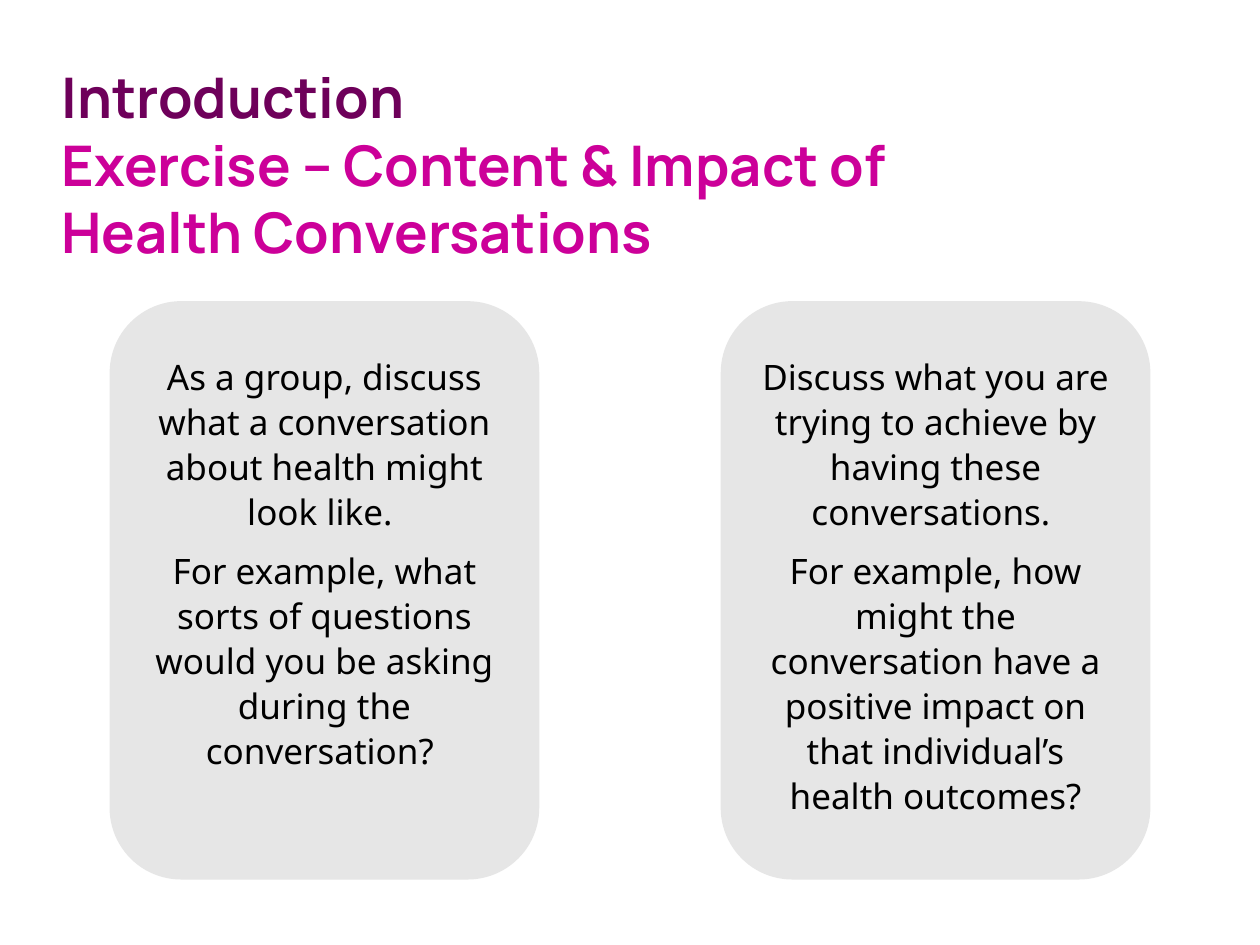
from dataclasses import dataclass

from pptx import Presentation
from pptx.dml.color import RGBColor
from pptx.enum.shapes import MSO_SHAPE
from pptx.enum.text import MSO_ANCHOR, PP_ALIGN
from pptx.util import Inches, Pt

RECT, ROUNDED = MSO_SHAPE.RECTANGLE, MSO_SHAPE.ROUNDED_RECTANGLE
TOP, CENTER = MSO_ANCHOR.TOP, PP_ALIGN.CENTER
PURPLE, PINK, GREY, BLACK = "6E005A", "CC0099", "E6E6E6", "000000"


@dataclass
class Card:
    left: float
    paragraphs: tuple[str, ...]


CARDS = [
    Card(0.87, (
        "As a group, discuss what a conversation about health might look like. ",
        "For example, what sorts of questions would you be asking during the conversation? ",
    )),
    Card(5.72, (
        "Discuss what you are trying to achieve by having these conversations. ",
        "For example, how might the conversation have a positive impact on that "
        "individual’s health outcomes?",
    )),
]


def rgb(color: str) -> RGBColor:
    return RGBColor.from_string(color)


def add_run(p, text: str, font: str, size: float, color: str, bold: bool = False) -> None:
    r = p.add_run()
    r.text = text
    r.font.name = font
    r.font.size = Pt(size)
    r.font.bold = bold
    r.font.color.rgb = rgb(color)


def add_box(s, kind, left: float, top: float, width: float, height: float):
    sp = s.shapes.add_shape(kind, Inches(left), Inches(top), Inches(width), Inches(height))
    sp.shadow.inherit = False
    sp.fill.solid()
    sp.fill.fore_color.rgb = rgb(GREY)
    sp.line.fill.background()
    return sp


def add_title(s) -> None:
    sp = s.shapes.add_textbox(Inches(0.39), Inches(0.45), Inches(7.78), Inches(1.72))
    tf = sp.text_frame
    tf.word_wrap = True
    p = tf.paragraphs[0]
    add_run(p, "Introduction", "Manrope", 32, PURPLE, bold=True)
    p.add_line_break()
    add_run(p, "Exercise – Content & Impact of Health Conversations", "Manrope", 32, PINK, bold=True)


def add_card(s, card: Card) -> None:
    add_box(s, ROUNDED, card.left, 2.39, 3.41, 4.59)
    sp = add_box(s, RECT, card.left + 0.165, 2.75, 3.08, 3.87)
    sp.line.color.rgb = rgb(GREY)
    sp.line.width = Pt(0.75)
    tf = sp.text_frame
    tf.word_wrap = True
    tf.vertical_anchor = TOP
    for i, text in enumerate(card.paragraphs):
        p = tf.add_paragraph() if i else tf.paragraphs[0]
        p.alignment = CENTER
        p.line_spacing = 1.07
        p.space_after = Pt(8)
        add_run(p, text, "Noto Sans", 20, BLACK)


def main() -> None:
    prs = Presentation()
    prs.slide_width, prs.slide_height = Inches(10), Inches(7.5)
    s = prs.slides.add_slide(prs.slide_layouts[6])

    # Heading
    add_title(s)

    # Discussion cards
    for card in CARDS:
        add_card(s, card)

    prs.save("out.pptx")


if __name__ == "__main__":
    main()
